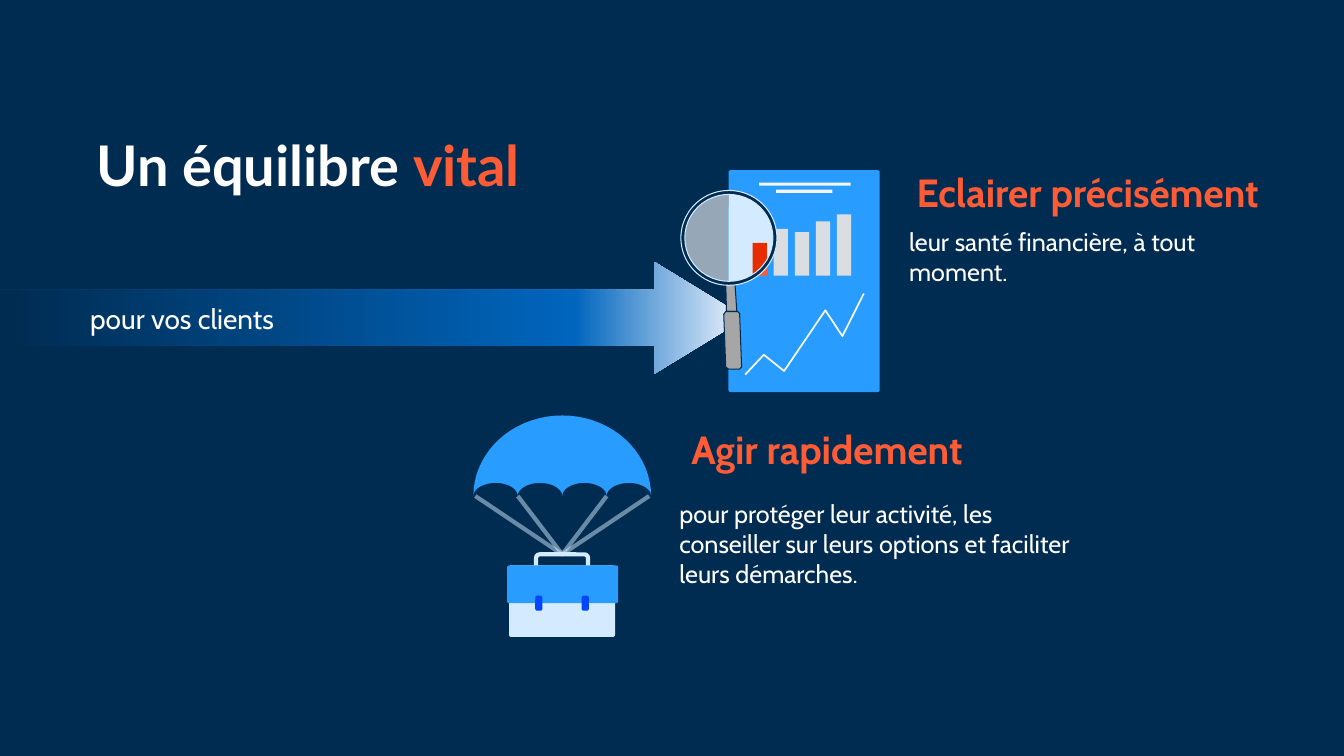
"""Build the "Un équilibre vital" slide."""
from dataclasses import dataclass
from copy import deepcopy
from math import cos, radians, sin

from lxml.etree import SubElement
from pptx import Presentation
from pptx.dml.color import RGBColor as Rgb
from pptx.enum.shapes import MSO_SHAPE as Preset
from pptx.enum.text import MSO_ANCHOR as Anchor, MSO_AUTO_SIZE as Fit, PP_ALIGN as Align
from pptx.oxml.ns import qn
from pptx.util import Cm, Pt

Point = tuple[float, float]
HUES = {
    "navy": "002C52", "white": "FFFFFF", "coral": "FF5C35", "sky": "299CFF",
    "pale": "D4EBFF", "mist": "F5F6F7", "grey": "DADDE1", "steel": "A6A6A6",
    "red": "E72D00", "blue": "0046FE", "ocean": "0065BD", "ice": "F2F6FF",
}
FADE = [(0, "ice"), (0.23, "ocean"), (0.99, "navy")]


@dataclass
class Look:
    """Fill and line of a shape."""
    fill: str = ""
    line: str = ""
    width: float = 0.75
    alpha: int = 100


@dataclass
class Box:
    """Preset shape with one optional corner or ring size."""
    x: float
    y: float
    w: float
    h: float
    look: Look
    round: float = 0
    kind: Preset = Preset.RECTANGLE


@dataclass
class Path:
    """Outline through points."""
    points: list[Point]
    look: Look
    closed: bool = True


@dataclass
class Note:
    """Text of one placeholder."""
    slot: int
    x: float
    y: float
    w: float
    h: float
    text: str
    size: int = 18
    hue: str = "white"
    bold: bool = False
    align: Align = Align.LEFT


def arc(x: float, y: float, rx: float, ry: float, start: int, end: int) -> list[Point]:
    """Return points along an ellipse, angles counted anticlockwise."""
    step = 5 if end > start else -5
    turns = [radians(a) for a in range(start, end + step, step)]
    return [(x + rx * cos(t), y - ry * sin(t)) for t in turns]


def hue(name: str) -> Rgb:
    """Return a named colour."""
    return Rgb.from_string(HUES[name])


def paint(shape, look: Look) -> None:
    """Apply a look to a shape."""
    shape.shadow.inherit = False
    if look.fill:
        shape.fill.solid()
        shape.fill.fore_color.rgb = hue(look.fill)
    else:
        shape.fill.background()
    if look.line:
        shape.line.color.rgb = hue(look.line)
        shape.line.width = Pt(look.width)
    else:
        shape.line.fill.background()
    if look.alpha < 100:
        for tone in shape.element.spPr.iter(qn("a:srgbClr")):
            SubElement(tone, qn("a:alpha"), val=str(look.alpha * 1000))


def draw(slide, item: Box | Path) -> None:
    """Draw one part of an icon."""
    if isinstance(item, Box):
        kind = Preset.ROUNDED_RECTANGLE if item.round and item.kind == Preset.RECTANGLE else item.kind
        shape = slide.shapes.add_shape(kind, Cm(item.x), Cm(item.y), Cm(item.w), Cm(item.h))
        if item.round:
            shape.adjustments[0] = item.round / min(item.w, item.h)
    else:
        first, *rest = [(Cm(x), Cm(y)) for x, y in item.points]
        pen = slide.shapes.build_freeform(*first)
        pen.add_line_segments(rest, close=item.closed)
        shape = pen.convert_to_shape()
    paint(shape, item.look)


def style(para, face: str, size: int, tone: str, bold: bool) -> None:
    """Set the font of a paragraph."""
    font = para.font
    font.name, font.size, font.bold = face, Pt(size), bold
    font.color.rgb = hue(tone)


def place(shape, x: float, y: float, w: float, h: float) -> None:
    """Move and size a shape."""
    shape.left, shape.top, shape.width, shape.height = Cm(x), Cm(y), Cm(w), Cm(h)


def write(slide, note: Note) -> None:
    """Fill a body placeholder."""
    shape = slide.placeholders[note.slot]
    place(shape, note.x, note.y, note.w, note.h)
    frame = shape.text_frame
    frame.auto_size, frame.word_wrap, frame.vertical_anchor = Fit.NONE, True, Anchor.TOP
    frame.margin_left = frame.margin_right = Cm(0.1)
    frame.margin_top = frame.margin_bottom = 0
    para = frame.paragraphs[0]
    para.text, para.alignment, para.space_before = note.text, note.align, Pt(0)
    props = para._p.get_or_add_pPr()
    props.set("marL", "0")
    props.set("indent", "0")
    SubElement(props, qn("a:buNone"))
    style(para, "Cabin", note.size, note.hue, note.bold)


def head(slide) -> None:
    """Fill the title."""
    shape = slide.shapes.title
    place(shape, 2.18, 3.15, 11.18, 1.96)
    frame = shape.text_frame
    frame.auto_size, frame.word_wrap, frame.vertical_anchor = Fit.NONE, False, Anchor.TOP
    para = frame.paragraphs[0]
    para.alignment = Align.LEFT
    style(para, "Lato", 40, "white", True)
    for text, tone in (("Un équilibre ", "white"), ("vital", "coral")):
        run = para.add_run()
        run.text = text
        run.font.color.rgb = hue(tone)


def arrow(slide) -> None:
    """Draw the fading arrow with its label."""
    shape = slide.shapes.add_shape(Preset.RIGHT_ARROW, 0, Cm(6.6), Cm(18.8), Cm(2.82))
    paint(shape, Look())
    shape.adjustments[1] = 0.82
    shape.fill.gradient()
    shape.fill.gradient_angle = 180
    stops = shape.element.spPr.find(".//" + qn("a:gsLst"))
    stops.append(deepcopy(stops[0]))
    for stop, (spot, tone) in zip(shape.fill.gradient_stops, FADE):
        stop.position, stop.color.rgb = spot, hue(tone)
    frame = shape.text_frame
    frame.margin_left, frame.vertical_anchor = Cm(2.27), Anchor.MIDDLE
    para = frame.paragraphs[0]
    para.text, para.alignment = "pour vos clients", Align.LEFT
    style(para, "Cabin", 20, "white", False)


BARS = [0.84, 1.18, 1.1, 1.37, 1.55]
LENS = (18.36, 6.01, 1.17, 1.17)
STEEL = Look("steel", "navy")
REPORT = [
    Box(18.36, 4.29, 3.81, 5.59, Look("sky"), 0.05),
    Box(19.13, 4.6, 2.31, 0.08, Look("mist")),
    Box(19.56, 4.78, 1.42, 0.08, Look("mist")),
    *[Box(18.97 + 0.53 * i, 6.95 - h, 0.36, h, Look("grey" if i else "coral")) for i, h in enumerate(BARS)],
    Path([(18.78, 9.44), (19.25, 8.94), (19.76, 9.35), (20.8, 7.82), (21.23, 8.47), (21.77, 7.4)],
         Look(line="mist", width=1.25), False),
    Path(arc(*LENS, 90, 270), Look("white", alpha=59)),
    Path(arc(*LENS, 90, -90), Look("pale")),
    Path([(18.97, 6.12), (19.33, 6.12), (19.33, 6.65), (19.2, 6.83), (19.05, 6.95), (18.97, 6.95)], Look("red")),
    Path([(18.57, 7.85), (18.31, 7.85), (18.29, 7.14), (18.52, 7.11)], STEEL),
    Box(17.16, 4.8, 2.42, 2.39, Look("navy", "pale"), 0.1, Preset.DONUT),
    Path([(18.29, 7.85), (18.59, 7.85), (18.64, 7.9), (18.69, 9.25), (18.64, 9.3), (18.36, 9.3),
          (18.29, 9.25), (18.24, 7.92)], STEEL),
]
MID, EDGE, LOBE = 14.17, 12.5, 0.56
LOBES = [p for i in (-3, -1, 1, 3) for p in arc(MID + i * LOBE, EDGE, LOBE, 0.33, 180, 0)]
CHUTE = [
    Path(arc(MID, EDGE, 4 * LOBE, 2.03, 0, 180) + LOBES, Look("sky")),
    *[Path([(MID - d, EDGE), (MID, 13.97), (MID + d, EDGE)], Look(line="pale", width=3, alpha=50), False)
      for d in (2.19, 1.12)],
    Box(13.51, 13.97, 1.31, 0.76, Look(line="pale", width=3), 0.09),
    Box(12.83, 14.25, 2.67, 1.8, Look("pale"), 0.05),
    Box(12.78, 14.25, 2.8, 0.95, Look("sky"), 0.05),
    *[Box(x, 15.01, 0.18, 0.38, Look("blue"), 0.05) for x in (13.49, 14.66)],
]
NOTES = [
    Note(1, 22.43, 4.24, 9.96, 1.19, "Eclairer précisément", 28, "coral", True, Align.CENTER),
    Note(2, 22.81, 5.69, 8.86, 1.55, "leur santé financière, à tout moment."),
    Note(3, 15.29, 10.72, 11.1, 1.19, "Agir rapidement", 28, "coral", True, Align.CENTER),
    Note(4, 17.02, 12.55, 10.34, 2.31,
         "pour protéger leur activité, les conseiller sur leurs options et faciliter leurs démarches."),
]


def main() -> None:
    """Build and save the deck."""
    deck = Presentation()
    deck.slide_width, deck.slide_height = Cm(33.87), Cm(19.05)
    slide = deck.slides.add_slide(deck.slide_layouts.get_by_name("Comparison"))
    slide.background.fill.solid()
    slide.background.fill.fore_color.rgb = hue("navy")
    head(slide)
    arrow(slide)
    for item in REPORT + CHUTE:
        draw(slide, item)
    for note in NOTES:
        write(slide, note)
    deck.save("out.pptx")


if __name__ == "__main__":
    main()
